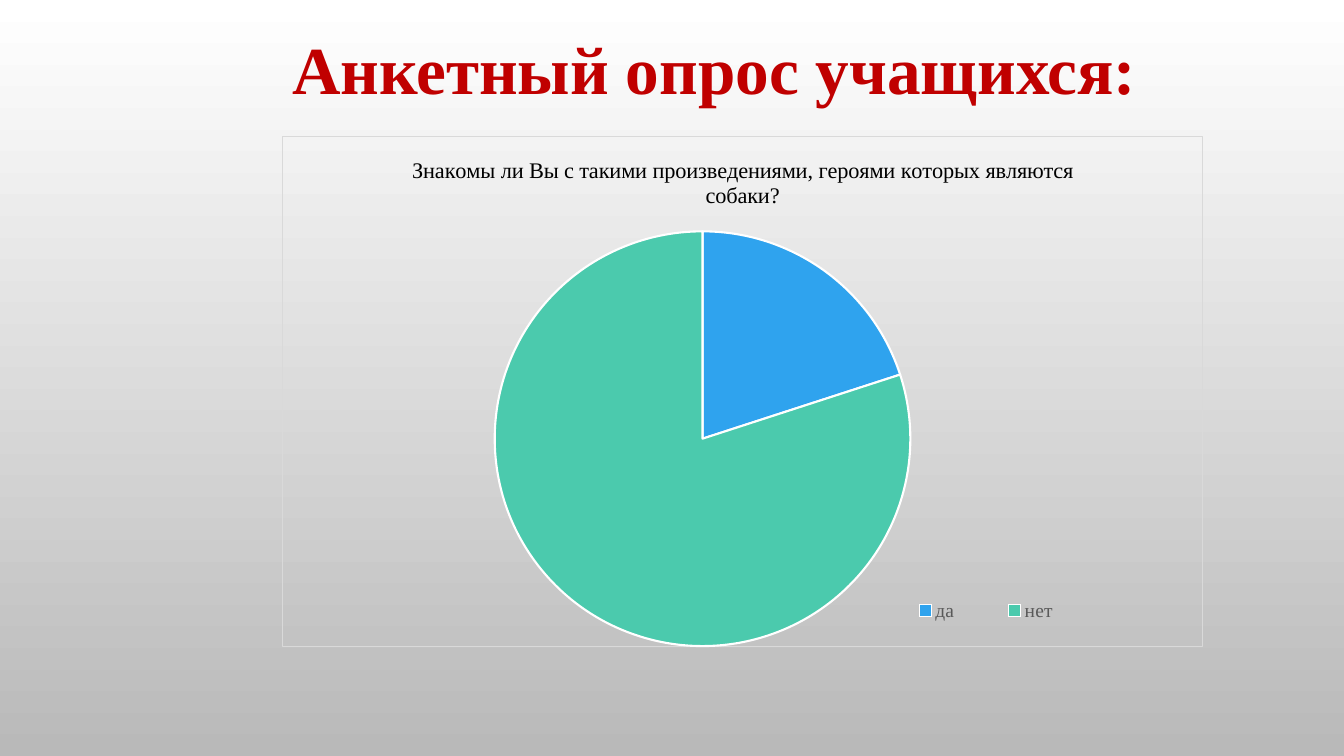
from dataclasses import dataclass

from lxml.etree import SubElement
from pptx import Presentation
from pptx.chart.data import CategoryChartData
from pptx.dml.color import RGBColor
from pptx.enum.chart import XL_CHART_TYPE as ChartType, XL_LEGEND_POSITION as LegendPosition
from pptx.enum.text import MSO_AUTO_SIZE as AutoSize
from pptx.oxml import parse_xml
from pptx.oxml.ns import nsdecls, qn
from pptx.util import Inches, Pt


@dataclass(frozen=True)
class Theme:
    serif: str = "Times New Roman"
    sans: str = "Calibri"
    heading: str = "C00000"
    ink: str = "000000"
    muted: str = "595959"
    frame: str = "D9D9D9"
    separator: str = "FFFFFF"
    backdrop: tuple = ("FFFFFF", "B9B9B9")
    slices: tuple = ("2FA3EE", "4BCAAD")
    heading_size: float = 48
    question_size: float = 16
    legend_size: float = 13.9
    base_size: float = 10


def style_font(font, *, name, size, color, bold=False):
    font.name = name
    font.size = Pt(size)
    font.bold = bold
    font.color.rgb = RGBColor.from_string(color)


def write_text(frame, text, **text_format):
    run = frame.paragraphs[0].add_run()
    run.text = text
    style_font(run.font, **text_format)


def manual_layout(box, inner=False):
    layout = parse_xml(f"<c:layout {nsdecls('c')}><c:manualLayout/></c:layout>")
    settings = [("layoutTarget", "inner")] if inner else []
    settings += [("xMode", "edge"), ("yMode", "edge"), *zip("xywh", box)]
    for tag, value in settings:
        SubElement(layout[0], qn(f"c:{tag}")).set("val", str(value))
    return layout


class SurveySlide:
    """Builds a survey slide from shares of the slide's width and height."""

    def __init__(self, presentation, theme):
        self.theme = theme
        self.width = presentation.slide_width
        self.height = presentation.slide_height
        self.slide = presentation.slides.add_slide(presentation.slide_layouts[6])

    def place(self, left, top, width, height):
        return (int(left * self.width), int(top * self.height),
                int(width * self.width), int(height * self.height))

    def backdrop(self):
        fill = self.slide.background.fill
        fill.gradient()
        fill.gradient_angle = 270
        for stop, color in zip(fill.gradient_stops, self.theme.backdrop):
            stop.color.rgb = RGBColor.from_string(color)

    def heading(self, text, box):
        frame = self.slide.shapes.add_textbox(*self.place(*box)).text_frame
        frame.word_wrap = False
        frame.auto_size = AutoSize.SHAPE_TO_FIT_TEXT
        write_text(frame, text, name=self.theme.serif, size=self.theme.heading_size,
                   color=self.theme.heading, bold=True)

    def pie(self, question, answers, box, plot_box, legend_box):
        theme = self.theme
        data = CategoryChartData()
        data.categories = list(answers)
        data.add_series("Series 1", list(answers.values()))
        chart = self.slide.shapes.add_chart(ChartType.PIE, *self.place(*box), data).chart
        style_font(chart.font, name=theme.sans, size=theme.base_size, color=theme.ink)
        write_text(chart.chart_title.text_frame, question, name=theme.serif,
                   size=theme.question_size, color=theme.ink)
        self.slices(chart)
        self.legend(chart, legend_box)
        self.frame(chart)
        plot_area = chart.plots[0]._element.getparent()
        for layout in plot_area.findall(qn("c:layout")):
            plot_area.remove(layout)
        plot_area.insert(0, manual_layout(plot_box, inner=True))

    def slices(self, chart):
        plot = chart.plots[0]
        plot.vary_by_categories = True
        for index, color in enumerate(self.theme.slices):
            style = plot.series[0].points[index].format
            style.fill.solid()
            style.fill.fore_color.rgb = RGBColor.from_string(color)
            style.line.color.rgb = RGBColor.from_string(self.theme.separator)
            style.line.width = Pt(1.5)

    def legend(self, chart, box):
        chart.has_legend = True
        legend = chart.legend
        legend.position = LegendPosition.RIGHT
        legend.include_in_layout = False
        style_font(legend.font, name=self.theme.serif, size=self.theme.legend_size,
                   color=self.theme.muted)
        element = legend._element
        for layout in element.findall(qn("c:layout")):
            element.remove(layout)
        element.find(qn("c:legendPos")).addnext(manual_layout(box))

    def frame(self, chart):
        outline = parse_xml(
            f'<c:spPr {nsdecls("c", "a")}><a:noFill/><a:ln w="{Pt(0.75)}"><a:solidFill>'
            f'<a:srgbClr val="{self.theme.frame}"/></a:solidFill></a:ln></c:spPr>')
        chart._chartSpace.find(qn("c:chart")).addnext(outline)


def main():
    presentation = Presentation()
    presentation.slide_width = Inches(13.33)
    presentation.slide_height = Inches(7.5)
    survey = SurveySlide(presentation, Theme())
    survey.backdrop()
    survey.heading("Анкетный опрос учащихся:", (0.21, 0.03, 0.66, 0.12))
    survey.pie(
        "Знакомы ли Вы с такими произведениями, героями которых являются собаки?",
        {"да": 20, "нет": 80},
        box=(0.21, 0.18, 0.685, 0.676),
        plot_box=(0.23, 0.186, 0.453, 0.814),
        legend_box=(0.64, 0.89, 0.25, 0.08),
    )
    presentation.save("out.pptx")


if __name__ == "__main__":
    main()
